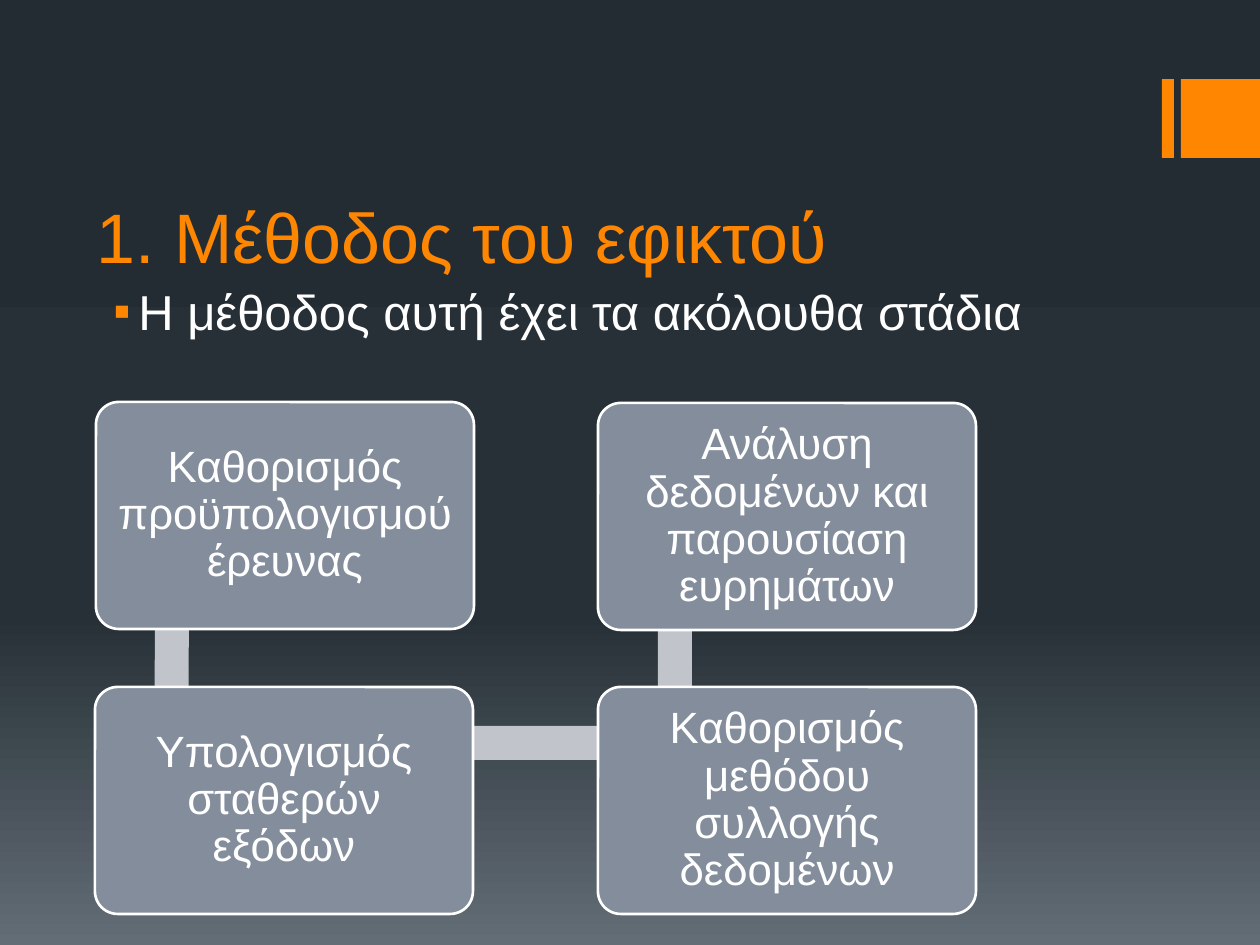
import copy
from dataclasses import dataclass

import pptx
import pptx.dml.color
import pptx.enum.shapes
import pptx.enum.text
import pptx.oxml
import pptx.oxml.ns
import pptx.util

EMU_PER_PX = 914400 / 126
FONT = "Arial"
COLORS = {
    "top": "242C33",
    "middle": "273037",
    "bottom": "636D76",
    "accent": "FF8600",
    "stage": "838D9B",
    "link": "C1C5CB",
    "white": "FFFFFF",
}


@dataclass(frozen=True)
class Bar:
    left: int
    top: int
    width: int
    height: int
    color: str
    rotation: float = 0


@dataclass(frozen=True)
class Stage:
    left: int
    top: int
    text: str
    width: int = 378
    height: int = 227


BARS = [
    Bar(1162, 79, 12, 79, "accent"),
    Bar(1181, 79, 79, 79, "accent"),
    Bar(31, 583, 282, 34, "link", 90.3),
    Bar(173, 726, 501, 34, "link"),
    Bar(534, 583, 282, 34, "link", 270),
]
STAGES = [
    Stage(96, 402, "Καθορισμός προϋπολογισμού έρευνας"),
    Stage(95, 687, "Υπολογισμός σταθερών εξόδων"),
    Stage(598, 687, "Καθορισμός μεθόδου συλλογής δεδομένων"),
    Stage(598, 403, "Ανάλυση δεδομένων και παρουσίαση ευρημάτων"),
]


def px(value: int) -> int:
    return round(value * EMU_PER_PX)


def rgb(name: str) -> pptx.dml.color.RGBColor:
    return pptx.dml.color.RGBColor.from_string(COLORS[name])


def set_font(paragraph, size: int, color: str) -> None:
    paragraph.font.name = FONT
    paragraph.font.size = pptx.util.Pt(size)
    paragraph.font.color.rgb = rgb(color)


def paint_background(slide) -> None:
    fill = slide.background.fill
    fill.gradient()
    fill.gradient_angle = 270
    stop_list = slide.element.find(".//" + pptx.oxml.ns.qn("a:gsLst"))
    stop_list.append(copy.deepcopy(stop_list[-1]))
    stops = [("top", 0), ("middle", 0.65), ("bottom", 1)]
    for stop, (color, position) in zip(fill.gradient_stops, stops):
        stop.color.rgb = rgb(color)
        stop.position = position


def add_filled_shape(slide, kind, item: Bar | Stage, color: str):
    shape = slide.shapes.add_shape(
        kind, px(item.left), px(item.top), px(item.width), px(item.height)
    )
    shape.shadow.inherit = False
    shape.fill.solid()
    shape.fill.fore_color.rgb = rgb(color)
    return shape


def add_bar(slide, bar: Bar) -> None:
    shape = add_filled_shape(
        slide, pptx.enum.shapes.MSO_SHAPE.RECTANGLE, bar, bar.color
    )
    shape.line.fill.background()
    shape.rotation = bar.rotation


def add_stage(slide, stage: Stage) -> None:
    shape = add_filled_shape(
        slide, pptx.enum.shapes.MSO_SHAPE.ROUNDED_RECTANGLE, stage, "stage"
    )
    shape.adjustments[0] = 0.1
    shape.line.color.rgb = rgb("white")
    shape.line.width = pptx.util.Pt(1.5)
    frame = shape.text_frame
    frame.word_wrap = True
    frame.vertical_anchor = pptx.enum.text.MSO_ANCHOR.MIDDLE
    frame.margin_left = frame.margin_right = px(12)
    frame.margin_top = frame.margin_bottom = px(12)
    paragraph = frame.paragraphs[0]
    paragraph.text = stage.text
    paragraph.alignment = pptx.enum.text.PP_ALIGN.CENTER
    paragraph.line_spacing = 0.9
    set_font(paragraph, 25, "white")


def format_title(slide) -> None:
    title = slide.shapes.title
    title.left, title.top, title.width, title.height = map(px, (84, 125, 1008, 159))
    frame = title.text_frame
    frame.text = "1. Μέθοδος του εφικτού"
    frame.auto_size = pptx.enum.text.MSO_AUTO_SIZE.NONE
    frame.vertical_anchor = pptx.enum.text.MSO_ANCHOR.BOTTOM
    paragraph = frame.paragraphs[0]
    paragraph.alignment = pptx.enum.text.PP_ALIGN.LEFT
    set_font(paragraph, 40, "accent")


def add_bullet(paragraph, color: str) -> None:
    properties = paragraph._p.get_or_add_pPr()
    properties.set("marL", str(px(32)))
    properties.set("indent", str(px(-25)))
    namespace = pptx.oxml.ns.nsdecls("a")
    position = len(properties.findall(pptx.oxml.ns.qn("a:spcBef")))
    for offset, markup in enumerate([
        f'<a:buClr {namespace}><a:srgbClr val="{COLORS[color]}"/></a:buClr>',
        f'<a:buFont {namespace} typeface="{FONT}"/>',
        f'<a:buChar {namespace} char="▪"/>',
    ]):
        properties.insert(position + offset, pptx.oxml.parse_xml(markup))


def add_introduction(slide) -> None:
    text_box = slide.shapes.add_textbox(px(94), px(275), px(1008), px(488))
    frame = text_box.text_frame
    frame.word_wrap = True
    paragraph = frame.paragraphs[0]
    paragraph.text = "Η μέθοδος αυτή έχει τα ακόλουθα στάδια"
    paragraph.space_before = pptx.util.Pt(5.6)
    set_font(paragraph, 28, "white")
    add_bullet(paragraph, "accent")


def main() -> None:
    presentation = pptx.Presentation()
    presentation.slide_width = px(1260)
    presentation.slide_height = px(945)
    slide = presentation.slides.add_slide(presentation.slide_layouts[5])
    paint_background(slide)
    format_title(slide)
    add_introduction(slide)
    for bar in BARS:
        add_bar(slide, bar)
    for stage in STAGES:
        add_stage(slide, stage)
    presentation.save("out.pptx")


if __name__ == "__main__":
    main()
